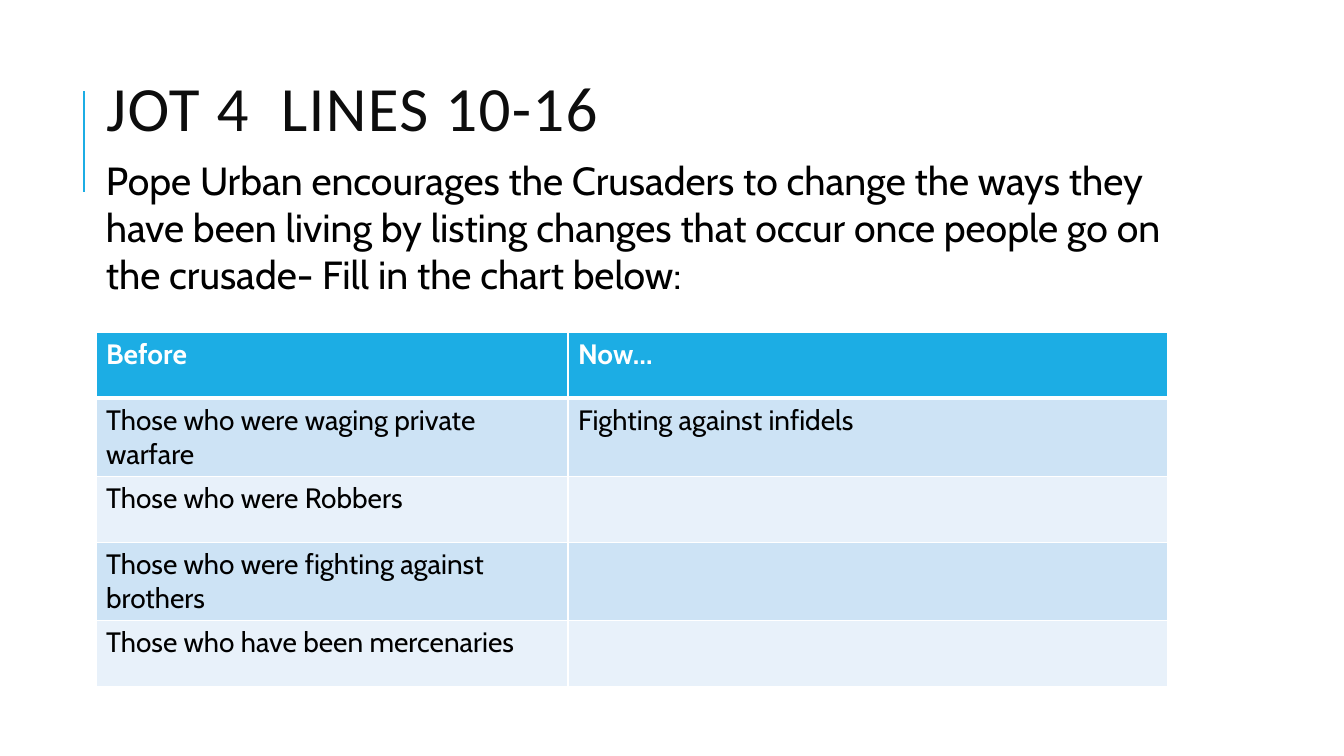
from lxml import etree
from pptx import Presentation
from pptx import util as u
from pptx.dml.color import RGBColor
from pptx.enum import shapes, text
from pptx.oxml.ns import qn

# Content
TITLE = "JOT 4  LINES 10-16\v"
PROMPT = ("Pope Urban encourages the Crusaders to change the ways they have been "
          "living by listing changes that occur once people go on the crusade- "
          "Fill in the chart below:")
ROWS = [
    ("Before", "Now…"),
    ("Those who were waging private warfare", "Fighting against infidels"),
    ("Those who were Robbers", ""),
    ("Those who were fighting against brothers", ""),
    ("Those who have been mercenaries", ""),
]
COLORS = {"accent": "1CADE4", "title": "0D0D0D", "text": "000000",
          "white": "FFFFFF", "dark band": "CDE3F5", "light band": "E8F1FA"}

# Layout in px
SLIDE = (1344, 756)
TITLE_BOX = (96, 99, 1072, 104)
PROMPT_BOX = (96, 151, 1091, 152)
TABLE_LEFT, TABLE_TOP = 96, 332
COLUMN_WIDTHS = (472, 600)
ROW_HEIGHT = 66
ACCENT_X, ACCENT_TOP, ACCENT_BOTTOM = 84, 91, 192
PX = 914400 / 100.8


def px(*lengths):
    return [u.Emu(round(length * PX)) for length in lengths]


def color(name):
    return RGBColor.from_string(COLORS[name])


def set_font(paragraph, name, size, color_name, bold=False):
    font = paragraph.font
    font.name, font.size, font.bold = name, u.Pt(size), bold
    font.color.rgb = color(color_name)


def set_borders(cell, top, bottom):
    properties = cell._tc.get_or_add_tcPr()
    widths = {"lnL": 1, "lnR": 1, "lnT": top, "lnB": bottom}
    for index, (side, width) in enumerate(widths.items()):
        line = etree.Element(qn("a:" + side), w=str(u.Pt(width)))
        fill = etree.SubElement(line, qn("a:solidFill"))
        etree.SubElement(fill, qn("a:srgbClr"), val=COLORS["white"])
        properties.insert(index, line)


presentation = Presentation()
presentation.slide_width, presentation.slide_height = px(*SLIDE)
slide = presentation.slides.add_slide(presentation.slide_layouts[5])

# Accent line
accent = slide.shapes.add_connector(
    shapes.MSO_CONNECTOR.STRAIGHT,
    *px(ACCENT_X, ACCENT_BOTTOM, ACCENT_X, ACCENT_TOP))
accent.line.color.rgb = color("accent")
accent.line.width = u.Pt(1.5)
etree.SubElement(accent._element.spPr, qn("a:effectLst"))

# Title
title = slide.shapes.title
title.left, title.top, title.width, title.height = px(*TITLE_BOX)
frame = title.text_frame
frame.text = TITLE
frame.auto_size = text.MSO_AUTO_SIZE.NONE
frame.vertical_anchor = text.MSO_ANCHOR.MIDDLE
paragraph = frame.paragraphs[0]
paragraph.alignment = text.PP_ALIGN.LEFT
paragraph.line_spacing = 0.8
set_font(paragraph, "Calibri", 45, "title")
paragraph._p.pPr.find(qn("a:defRPr")).set("spc", "100")

# Table
table = slide.shapes.add_table(
    len(ROWS), len(COLUMN_WIDTHS),
    *px(TABLE_LEFT, TABLE_TOP, sum(COLUMN_WIDTHS), ROW_HEIGHT * len(ROWS))).table
for column, width in zip(table.columns, px(*COLUMN_WIDTHS)):
    column.width = width
for row, words in enumerate(ROWS):
    header = row == 0
    band = "accent" if header else "dark band" if row % 2 else "light band"
    for column, wording in enumerate(words):
        cell = table.cell(row, column)
        cell.text = wording
        cell.fill.solid()
        cell.fill.fore_color.rgb = color(band)
        set_font(cell.text_frame.paragraphs[0], "Cabin", 20,
                 "white" if header else "text", bold=header)
        set_borders(cell, top=3 if row == 1 else 1, bottom=3 if header else 1)

# Prompt
prompt = slide.shapes.add_textbox(*px(*PROMPT_BOX))
frame = prompt.text_frame
frame.word_wrap = True
frame.auto_size = text.MSO_AUTO_SIZE.SHAPE_TO_FIT_TEXT
frame.text = PROMPT
set_font(frame.paragraphs[0], "Cabin", 28, "text")

presentation.save("out.pptx")
